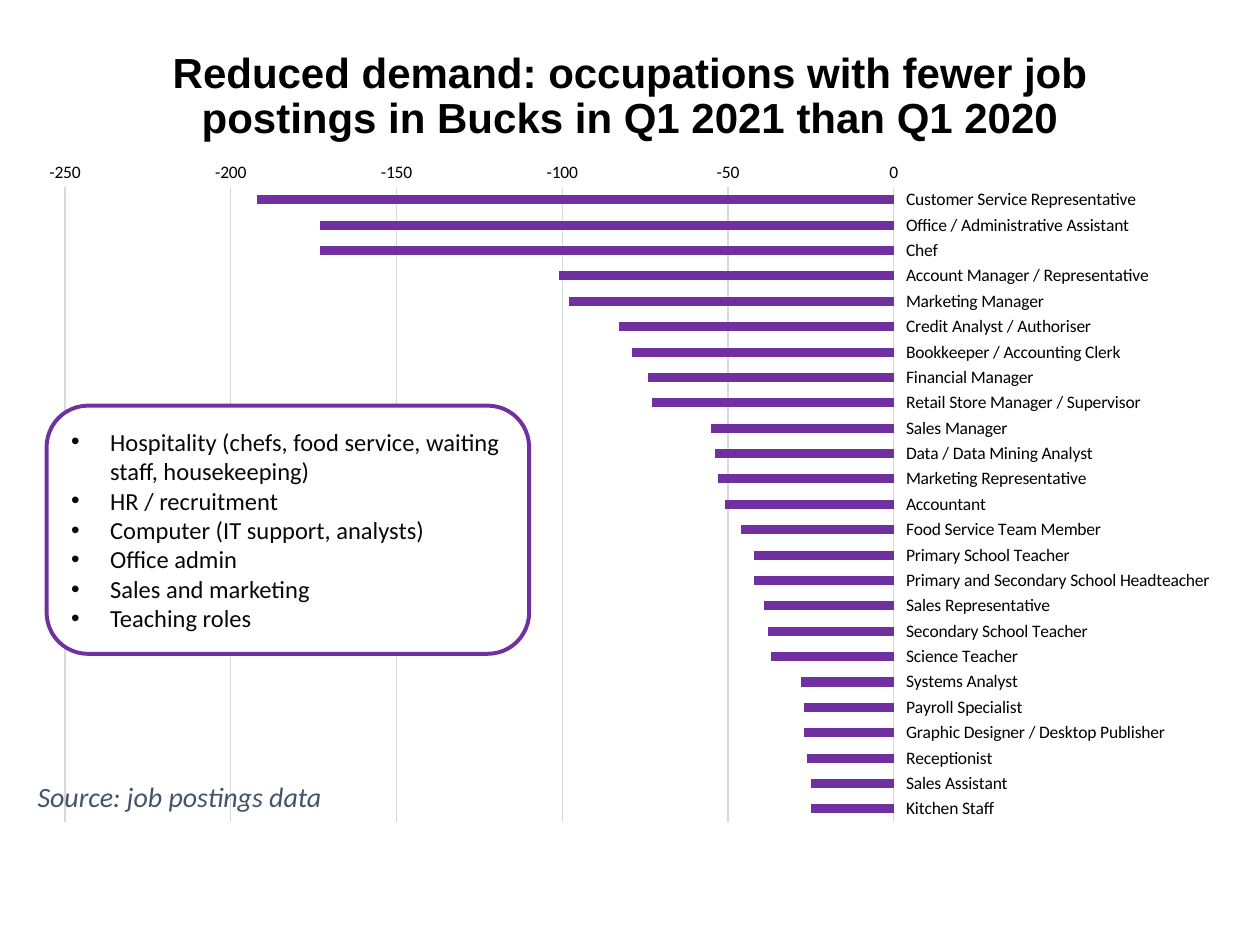
from dataclasses import dataclass

from lxml import etree
from pptx import Presentation, util as u
from pptx.chart.data import CategoryChartData
from pptx.dml.color import RGBColor
from pptx.enum import chart as ch, shapes, text
from pptx.oxml.ns import qn


@dataclass(frozen=True)
class Theme:
    """Colours, fonts and type sizes of the slide."""
    black: str = "000000"
    ink: str = "080808"
    slate: str = "44546A"
    grid: str = "D9D9D9"
    white: str = "FFFFFF"
    purple: str = "7030A0"
    head: str = "Arial"
    body: str = "Calibri"
    title: int = 24
    note: int = 16
    list: int = 14
    axis: int = 10


T = Theme()
WIDE, HIGH = u.Inches(10), u.Inches(7.5)

JOBS = [
    ("Customer Service Representative", -192),
    ("Office / Administrative Assistant", -173),
    ("Chef", -173),
    ("Account Manager / Representative", -101),
    ("Marketing Manager", -98),
    ("Credit Analyst / Authoriser", -83),
    ("Bookkeeper / Accounting Clerk", -79),
    ("Financial Manager", -74),
    ("Retail Store Manager / Supervisor", -73),
    ("Sales Manager", -55),
    ("Data / Data Mining Analyst", -54),
    ("Marketing Representative", -53),
    ("Accountant", -51),
    ("Food Service Team Member", -46),
    ("Primary School Teacher", -42),
    ("Primary and Secondary School Headteacher", -42),
    ("Sales Representative", -39),
    ("Secondary School Teacher", -38),
    ("Science Teacher", -37),
    ("Systems Analyst", -28),
    ("Payroll Specialist", -27),
    ("Graphic Designer / Desktop Publisher", -27),
    ("Receptionist", -26),
    ("Sales Assistant", -25),
    ("Kitchen Staff", -25),
]
AREAS = [
    "Hospitality (chefs, food service, waiting staff, housekeeping)",
    "HR / recruitment",
    "Computer (IT support, analysts)",
    "Office admin",
    "Sales and marketing",
    "Teaching roles",
]


def area(x, y, w, h):
    """Turn percentages of the slide's size into a left, top, width, height."""
    return [int(part * size / 100) for part, size in zip((x, y, w, h), (WIDE, HIGH) * 2)]


def style(font, face, size, tone, bold=False, slant=False):
    """Set the look of a font."""
    font.name, font.size = face, u.Pt(size)
    font.color.rgb = RGBColor.from_string(tone)
    font.bold, font.italic = bold, slant


def stroke(line, tone, width):
    """Set a line's colour and width."""
    line.color.rgb = RGBColor.from_string(tone)
    line.width = u.Pt(width)


def paint(fill, tone):
    """Set a solid fill."""
    fill.solid()
    fill.fore_color.rgb = RGBColor.from_string(tone)


def label(slide, box, words, space):
    """Add a wrapped text box and return its frame and paragraph."""
    frame = slide.shapes.add_textbox(*box).text_frame
    frame.word_wrap = True
    para = frame.paragraphs[0]
    para.text, para.line_spacing = words, space
    return frame, para


def bullet(para):
    """Give a paragraph a hanging round bullet."""
    props = para._p.get_or_add_pPr()
    inch = u.Inches(0.31)
    props.set("marL", str(inch))
    props.set("indent", str(-inch))
    etree.SubElement(props, qn("a:buFont")).set("typeface", "Arial")
    etree.SubElement(props, qn("a:buChar")).set("char", "•")


def panel(slide, box, items):
    """Add a rounded panel with a bulleted list."""
    shape = slide.shapes.add_shape(shapes.MSO_SHAPE.ROUNDED_RECTANGLE, *box)
    shape.shadow.inherit = False
    paint(shape.fill, T.white)
    stroke(shape.line, T.purple, 2.25)
    frame = shape.text_frame
    frame.word_wrap = True
    frame.vertical_anchor = text.MSO_ANCHOR.MIDDLE
    for n, item in enumerate(items):
        para = frame.add_paragraph() if n else frame.paragraphs[0]
        para.text, para.alignment = item, text.PP_ALIGN.LEFT
        bullet(para)
        style(para.font, T.body, T.list, T.ink)


def bars(slide, box, rows):
    """Add the bar chart of falls in postings."""
    data = CategoryChartData()
    data.categories = [name for name, _ in rows]
    data.add_series("Series 1", [value for _, value in rows])
    chart = slide.shapes.add_chart(ch.XL_CHART_TYPE.BAR_CLUSTERED, *box, data).chart
    chart.has_legend = chart.has_title = False
    style(chart.font, T.body, T.axis, T.black)
    plot = chart.plots[0]
    plot.gap_width, plot.vary_by_categories = 182, False
    series = plot.series[0]
    series.invert_if_negative = False
    paint(series.format.fill, T.purple)
    cats, vals = chart.category_axis, chart.value_axis
    for axis in (cats, vals):
        axis.major_tick_mark = axis.minor_tick_mark = ch.XL_TICK_MARK.NONE
        style(axis.tick_labels.font, T.body, T.axis, T.black)
    cats.reverse_order = True
    cats.tick_label_position = ch.XL_TICK_LABEL_POSITION.HIGH
    stroke(cats.format.line, T.grid, 0.75)
    vals.minimum_scale, vals.maximum_scale, vals.major_unit = -250, 0, 50
    vals.format.line.fill.background()
    stroke(vals.major_gridlines.format.line, T.grid, 0.75)


def main():
    """Build and save the slide."""
    deck = Presentation()
    deck.slide_width, deck.slide_height = WIDE, HIGH
    slide = deck.slides.add_slide(deck.slide_layouts[6])
    bars(slide, area(2, 15.73, 95.9, 72.67), JOBS)
    frame, para = label(
        slide, area(6.9, 3.47, 86.2, 13.6),
        "Reduced demand: occupations with fewer job postings in Bucks in Q1 2021 than Q1 2020", 0.9)
    frame.vertical_anchor = text.MSO_ANCHOR.MIDDLE
    para.alignment = text.PP_ALIGN.CENTER
    style(para.font, T.head, T.title, T.black, bold=True)
    panel(slide, area(3.7, 42.93, 38.3, 26.27), AREAS)
    frame, para = label(slide, area(2, 81.6, 66.7, 5.07), "Source: job postings data", 1.07)
    frame.auto_size = text.MSO_AUTO_SIZE.SHAPE_TO_FIT_TEXT
    para.space_after = u.Pt(8)
    style(para.font, T.body, T.note, T.slate, slant=True)
    deck.save("out.pptx")


if __name__ == "__main__":
    main()
